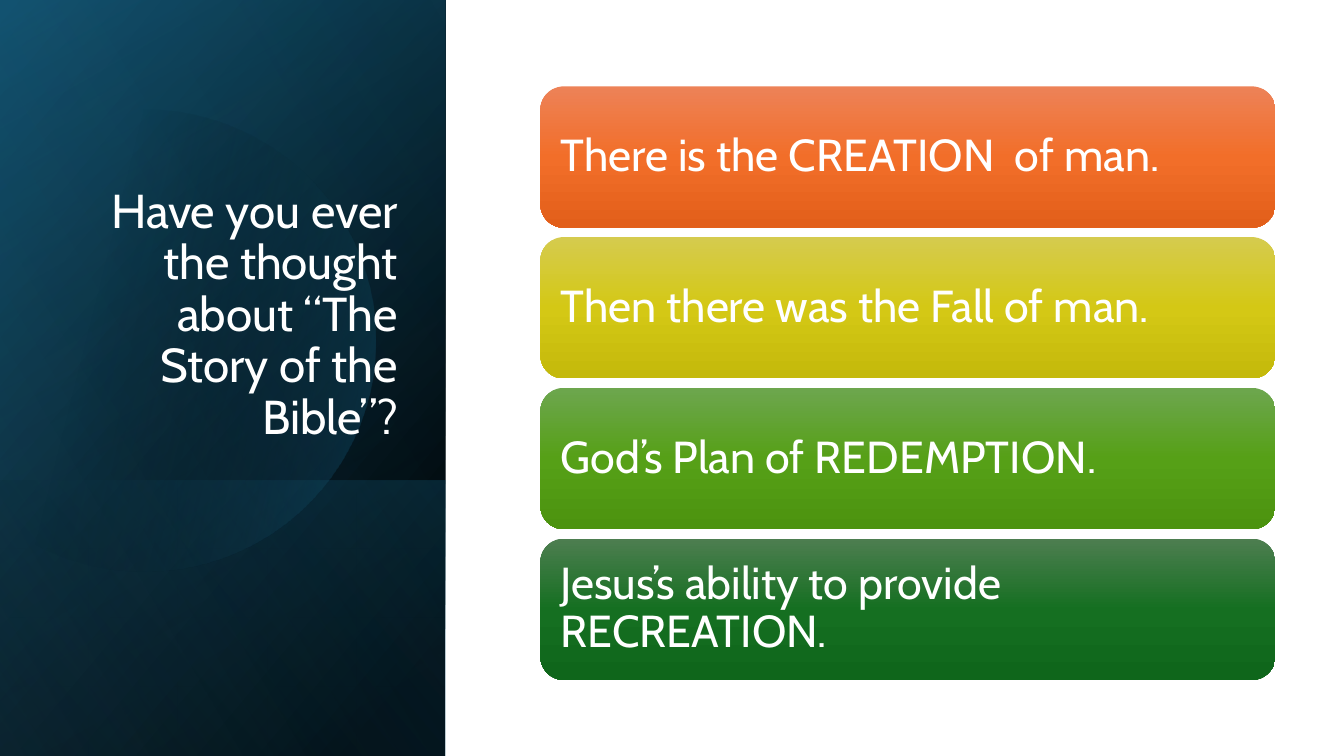
import math
from dataclasses import dataclass

from lxml import etree
from pptx import Presentation
from pptx import util as u
from pptx.dml.color import RGBColor
from pptx.enum import shapes, text
from pptx.oxml import ns


@dataclass(frozen=True)
class Theme:
    font: str = "Cabin"
    title_size: float = 34
    card_size: float = 32
    text_color: str = "FFFFFF"
    dark: str = "000000"
    teal: str = "156082"
    deep_teal: str = "104862"
    sky: str = "46B1E1"
    orange: tuple = ("ED8257", "F26E29", "E25F1A")
    yellow: tuple = ("D5CB4E", "D4C815", "C4B90B")
    green: tuple = ("6DA64E", "56A017", "4C930F")
    forest: tuple = ("4D7E50", "156F21", "0F661B")


@dataclass(frozen=True)
class Box:
    left: float
    top: float
    width: float
    height: float

    def lengths(self):
        return [u.Pt(v) for v in (self.left, self.top, self.width, self.height)]


THEME = Theme()


def paint_gradient(shape, stops, angle):
    shape.shadow.inherit = False
    shape.line.fill.background()
    shape.fill.gradient()
    shape.fill.gradient_angle = -angle % 360
    stop_list = shape.element.spPr.find(ns.qn("a:gradFill")).find(ns.qn("a:gsLst"))
    for old_stop in list(stop_list):
        stop_list.remove(old_stop)
    for position, color, opacity in stops:
        stop = etree.SubElement(stop_list, ns.qn("a:gs"), pos=str(position * 1000))
        rgb = etree.SubElement(stop, ns.qn("a:srgbClr"), val=color)
        if opacity < 100:
            etree.SubElement(rgb, ns.qn("a:alpha"), val=str(opacity * 1000))


def style_paragraph(paragraph, size, alignment):
    paragraph.alignment = alignment
    paragraph.line_spacing = 0.9
    paragraph.font.name = THEME.font
    paragraph.font.size = u.Pt(size)
    paragraph.font.color.rgb = RGBColor.from_string(THEME.text_color)


def add_turned_layer(slide, box, stops, angle):
    turned = Box(
        box.left + (box.width - box.height) / 2,
        box.top + (box.height - box.width) / 2,
        box.height,
        box.width,
    )
    layer = slide.shapes.add_shape(shapes.MSO_SHAPE.RECTANGLE, *turned.lengths())
    layer.rotation = 90
    layer.element.spPr.find(ns.qn("a:xfrm")).set("flipH", "1")
    paint_gradient(layer, stops, angle)


def add_disc(slide, box):
    center_x, center_y, radius = box.left + 103, box.top + 243.5, 165
    reach = math.acos((box.left - center_x) / radius)
    steps = 90
    points = [
        (
            u.Pt(center_x + radius * math.cos(turn)),
            u.Pt(center_y + radius * math.sin(turn)),
        )
        for turn in (reach * (2 * i / steps - 1) for i in range(steps + 1))
    ]
    builder = slide.shapes.build_freeform(*points[0])
    builder.add_line_segments(points[1:], close=True)
    paint_gradient(
        builder.convert_to_shape(), [(29, THEME.dark, 0), (100, THEME.teal, 43)], 14
    )


def add_title_panel(slide, box, title_text):
    lower_height = 197
    lower = Box(
        box.left, box.top + box.height - lower_height, box.width, lower_height
    )
    add_turned_layer(
        slide, box, [(8, THEME.dark, 100), (100, THEME.deep_teal, 100)], 50
    )
    add_turned_layer(slide, box, [(0, THEME.dark, 0), (99, THEME.teal, 46)], 30)
    add_turned_layer(slide, lower, [(2, THEME.teal, 29), (100, THEME.dark, 30)], 130)
    add_disc(slide, box)
    add_turned_layer(slide, box, [(0, THEME.dark, 0), (99, THEME.sky, 11)], 120)

    title = slide.shapes.title
    title.element.getparent().append(title.element)
    title.left, title.top, title.width, title.height = Box(
        box.left + 46, box.top + 132.5, 245.5, 188.5
    ).lengths()
    frame = title.text_frame
    frame.text = title_text
    frame.word_wrap = True
    frame.auto_size = text.MSO_AUTO_SIZE.NONE
    frame.vertical_anchor = text.MSO_ANCHOR.BOTTOM
    style_paragraph(frame.paragraphs[0], THEME.title_size, text.PP_ALIGN.RIGHT)


def add_cards(slide, box, cards):
    gap = 6.7
    height = (box.height - gap * (len(cards) - 1)) / len(cards)
    for index, (card_text, colors) in enumerate(cards):
        top = box.top + index * (height + gap)
        card = slide.shapes.add_shape(
            shapes.MSO_SHAPE.ROUNDED_RECTANGLE,
            *Box(box.left, top, box.width, height).lengths(),
        )
        paint_gradient(
            card, [(50 * i, color, 100) for i, color in enumerate(colors)], 90
        )
        frame = card.text_frame
        frame.text = card_text
        frame.word_wrap = True
        frame.vertical_anchor = text.MSO_ANCHOR.MIDDLE
        frame.margin_left = frame.margin_right = u.Pt(9.6)
        frame.margin_top = frame.margin_bottom = u.Pt(9.6)
        style_paragraph(frame.paragraphs[0], THEME.card_size, text.PP_ALIGN.LEFT)


def main():
    presentation = Presentation()
    presentation.slide_width = u.Pt(960)
    presentation.slide_height = u.Pt(540)
    slide = presentation.slides.add_slide(presentation.slide_layouts[5])
    add_title_panel(
        slide,
        Box(0, 0, 318, 540),
        "Have you ever the thought about “The Story of the Bible”?",
    )
    add_cards(
        slide,
        Box(386, 61.7, 525, 424),
        [
            ("There is the CREATION  of man.", THEME.orange),
            ("Then there was the Fall of man.", THEME.yellow),
            ("God’s Plan of REDEMPTION.", THEME.green),
            ("Jesus’s ability to provide RECREATION.", THEME.forest),
        ],
    )
    presentation.save("out.pptx")


if __name__ == "__main__":
    main()
